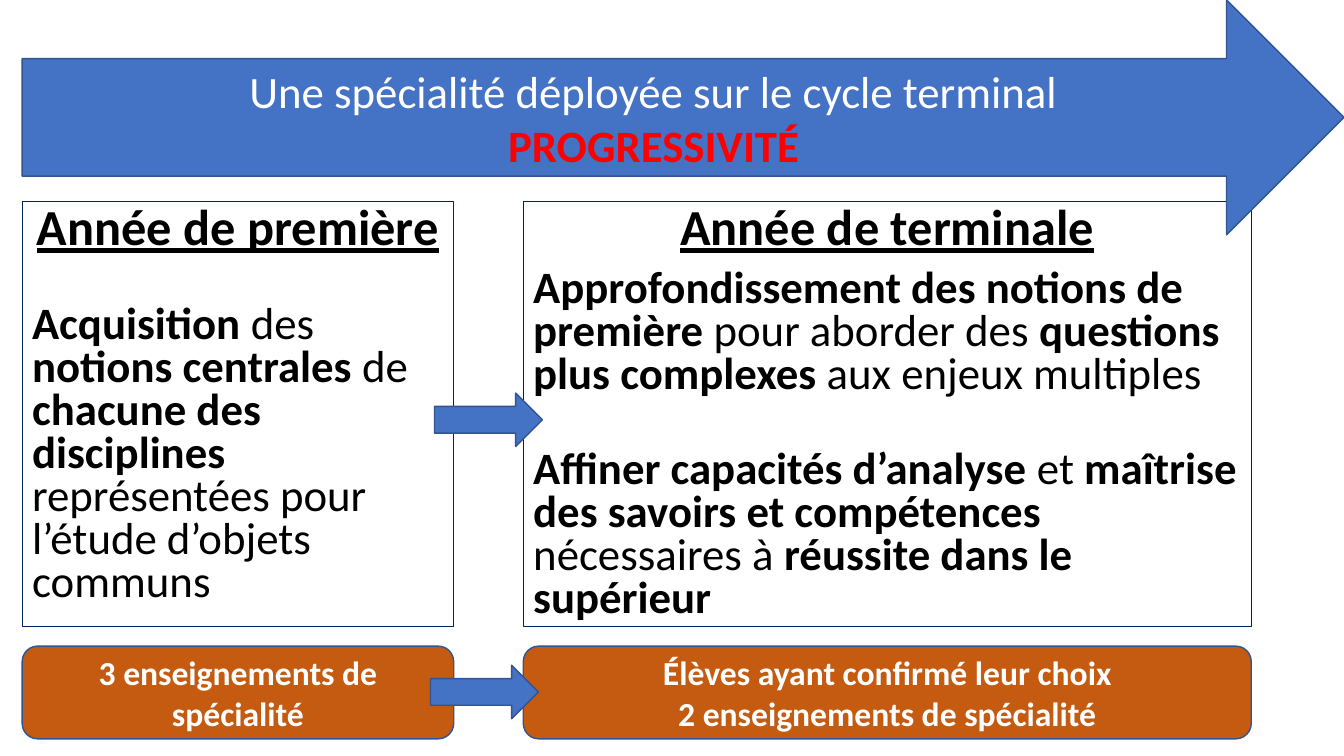
"""Build a slide on how a speciality progresses from première to terminale."""
from dataclasses import dataclass

from pptx import Presentation
from pptx.dml.color import RGBColor
from pptx.enum.shapes import MSO_SHAPE
from pptx.enum.text import MSO_ANCHOR, PP_ALIGN
from pptx.util import Inches, Pt


@dataclass(frozen=True)
class Theme:
    font: str = "Calibri"
    blue: str = "4472C4"
    outline: str = "325491"
    navy: str = "002060"
    orange: str = "C55A11"
    red: str = "FF0000"
    white: str = "FFFFFF"
    black: str = "000000"
    heading: int = 36
    body: int = 32
    badge: int = 24


theme = Theme()
WIDTH, HEIGHT = 13.33, 7.5
COLUMNS = [(0.22, 4.28), (5.19, 7.22)]
PANEL_TOP, PANEL_HEIGHT = 2, 4.22
BADGE_TOP, BADGE_HEIGHT = 6.41, 0.92
ARROW_WIDTH, ARROW_HEIGHT = 1.07, 0.53

PANELS = [
    ("Année de première", [
        (36, [("Acquisition", True), (" des ", False), ("notions centrales ", True),
              ("de ", False), ("chacune des disciplines ", True),
              ("représentées pour l’étude d’objets communs", False)]),
    ]),
    ("Année de terminale", [
        (10, [("Approfondissement des notions de première ", True),
              ("pour aborder des ", False), ("questions plus complexes", True),
              (" aux enjeux multiples", False)]),
        (37, [("Affiner capacités d’analyse ", True), ("et ", False),
              ("maîtrise des savoirs et compétences ", True),
              ("nécessaires à ", False), ("réussite dans le supérieur", True)]),
    ]),
]
BADGES = [
    ["3 enseignements de spécialité"],
    ["Élèves ayant confirmé leur choix", "2 enseignements de spécialité"],
]

presentation = Presentation()
presentation.slide_width = Inches(WIDTH)
presentation.slide_height = Inches(HEIGHT)
slide = presentation.slides.add_slide(presentation.slide_layouts[6])


def add_box(kind, left, top, width, height, fill, line=theme.outline, weight=1):
    shape = slide.shapes.add_shape(
        kind, Inches(left), Inches(top), Inches(width), Inches(height))
    shape.shadow.inherit = False
    if fill:
        shape.fill.solid()
        shape.fill.fore_color.rgb = RGBColor.from_string(fill)
    else:
        shape.fill.background()
    shape.line.color.rgb = RGBColor.from_string(line)
    shape.line.width = Pt(weight)
    shape.text_frame.word_wrap = True
    shape.text_frame.vertical_anchor = MSO_ANCHOR.MIDDLE
    return shape


def add_paragraph(shape, runs, size, color, align=PP_ALIGN.CENTER):
    frame = shape.text_frame
    paragraph = frame.add_paragraph() if frame.text else frame.paragraphs[0]
    paragraph.alignment = align
    paragraph.font.name = theme.font
    paragraph.font.size = Pt(size)
    paragraph.font.color.rgb = RGBColor.from_string(color)
    for text, bold in runs:
        run = paragraph.add_run()
        run.text = text
        run.font.bold = bold
    return paragraph


for (left, width), (heading, statements) in zip(COLUMNS, PANELS):
    panel = add_box(MSO_SHAPE.RECTANGLE, left, PANEL_TOP, width, PANEL_HEIGHT,
                    None, theme.navy, 0.75)
    panel.text_frame.vertical_anchor = MSO_ANCHOR.TOP
    title = add_paragraph(panel, [(heading, True)], theme.heading, theme.black)
    title.font.underline = True
    title.line_spacing = 0.8
    for gap, runs in statements:
        statement = add_paragraph(panel, runs, theme.body, theme.black, PP_ALIGN.LEFT)
        statement.line_spacing = 0.8
        statement.space_before = Pt(gap)

margin = COLUMNS[0][0]
banner = add_box(MSO_SHAPE.RIGHT_ARROW, margin, 0, WIDTH - margin, 2.33, theme.blue)
add_paragraph(banner, [("Une spécialité déployée sur le cycle terminal", False)],
              theme.body, theme.white)
add_paragraph(banner, [("PROGRESSIVITÉ", True)], theme.body, theme.red)

for (left, width), lines in zip(COLUMNS, BADGES):
    badge = add_box(MSO_SHAPE.ROUNDED_RECTANGLE, left, BADGE_TOP, width, BADGE_HEIGHT,
                    theme.orange)
    for text in lines:
        add_paragraph(badge, [(text, True)], theme.badge, theme.white)

for left, top in [(4.31, 3.9), (4.27, 6.6)]:
    add_box(MSO_SHAPE.RIGHT_ARROW, left, top, ARROW_WIDTH, ARROW_HEIGHT, theme.blue)

presentation.save("out.pptx")
